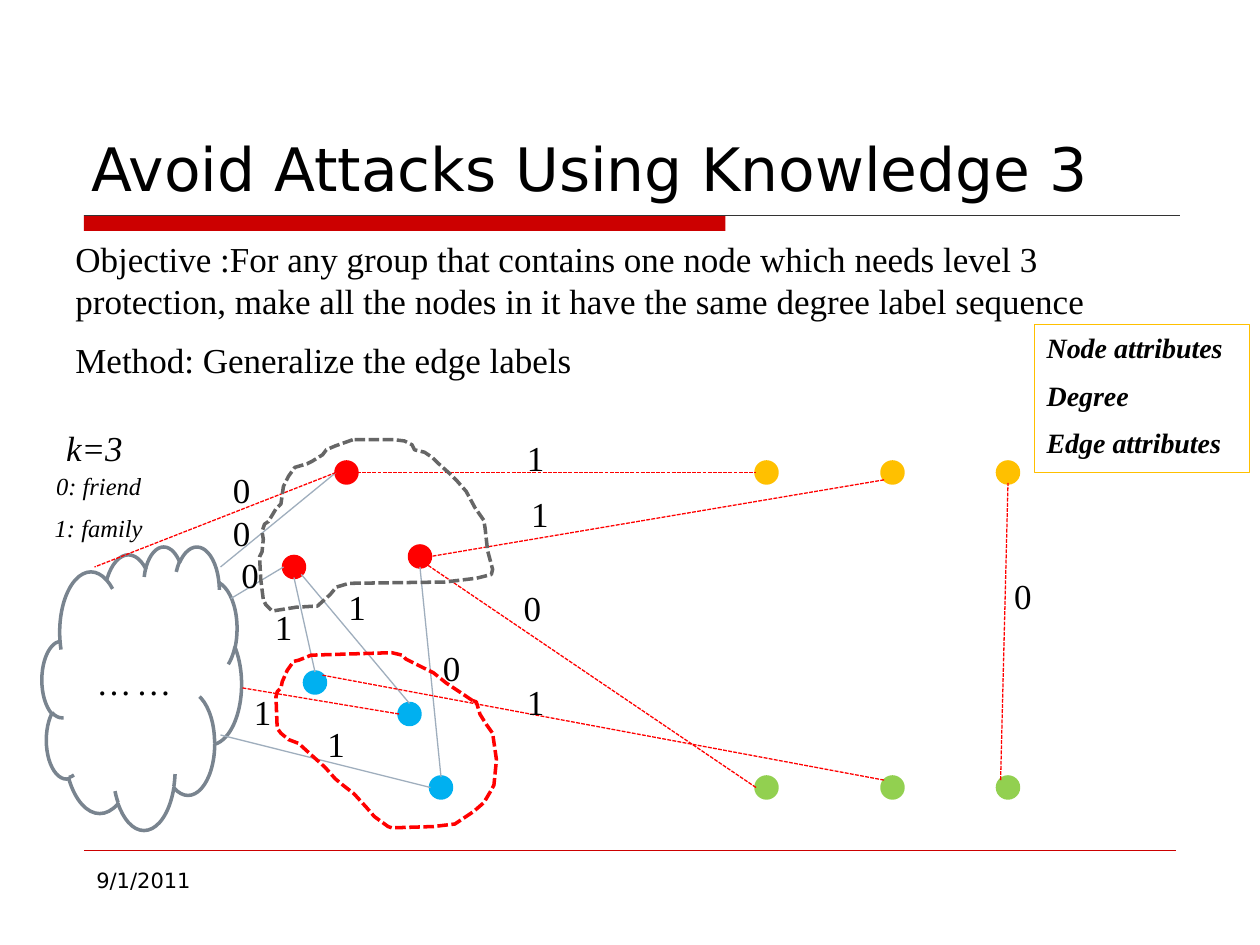
from dataclasses import dataclass

from lxml import etree
from pptx import Presentation
from pptx import util as u
from pptx.dml.color import RGBColor
from pptx.enum import dml, shapes, text
from pptx.oxml.ns import qn


@dataclass(frozen=True)
class Theme:
    black: str = "000000"
    red: str = "FF0000"
    blue: str = "00B0F0"
    gold: str = "FFC000"
    green: str = "92D050"
    bar: str = "CC0000"
    rule: str = "333333"
    edge: str = "9FAEBD"
    cloud: str = "79848F"
    group: str = "666666"
    serif: str = "Times New Roman"
    sans: str = "DejaVu Sans"
    head: float = 34.2
    body: float = 20
    attr: float = 16
    key: float = 14
    date: float = 12
    thin: float = 0.75
    thick: float = 2


LEFT, MID = text.PP_ALIGN.LEFT, text.PP_ALIGN.CENTER
TOP, CENTER, BASE = (text.MSO_ANCHOR.TOP, text.MSO_ANCHOR.MIDDLE,
                     text.MSO_ANCHOR.BOTTOM)
KIND = shapes.MSO_SHAPE


class Board:
    """A slide on a grid of 120 columns and 90 rows."""

    def __init__(self, deck, theme):
        self.theme = theme
        self.slide = deck.slides.add_slide(deck.slide_layouts[5])
        self.items = self.slide.shapes
        self.col = deck.slide_width / 120
        self.row = deck.slide_height / 90

    def area(self, x, y, w, h):
        return (round(x * self.col), round(y * self.row),
                round(w * self.col), round(h * self.row))

    def ink(self, line, color, width, dash=False):
        line.color.rgb = RGBColor.from_string(color)
        line.width = u.Pt(width)
        if dash:
            line.dash_style = dml.MSO_LINE.SQUARE_DOT

    def paint(self, shape, fill, line, width, dash=False):
        shape.shadow.inherit = False
        if fill:
            shape.fill.solid()
            shape.fill.fore_color.rgb = RGBColor.from_string(fill)
        else:
            shape.fill.background()
        if line:
            self.ink(shape.line, line, width, dash)
        else:
            shape.line.fill.background()

    def letter(self, shape, words, size, font=None, align=LEFT, anchor=TOP,
               bold=False, italic=False):
        frame = shape.text_frame
        frame.text = words
        frame.word_wrap = True
        frame.vertical_anchor = anchor
        for i, para in enumerate(frame.paragraphs):
            para.alignment = align
            if i:
                para.space_before = u.Pt(size / 2)
            for run in para.runs:
                run.font.name = font or self.theme.serif
                run.font.size = u.Pt(size)
                run.font.bold, run.font.italic = bold, italic
                run.font.color.rgb = RGBColor.from_string(self.theme.black)

    def title(self, words, *box):
        shape = self.items.title
        shape.left, shape.top, shape.width, shape.height = self.area(*box)
        self.letter(shape, words, self.theme.head, self.theme.sans, anchor=BASE)

    def label(self, words, box, size, **style):
        self.letter(self.items.add_textbox(*self.area(*box)), words, size, **style)

    def shape(self, kind, box, fill=None, line=None, width=2):
        item = self.items.add_shape(kind, *self.area(*box))
        self.paint(item, fill, line, width)
        return item

    def node(self, x, y, color):
        self.shape(KIND.OVAL, (x - 1, y - 1, 2, 2), color, color, self.theme.thick)

    def line(self, ends, color, width, dash=False):
        item = self.items.add_connector(shapes.MSO_CONNECTOR.STRAIGHT,
                                        *self.area(*ends))
        self.ink(item.line, color, width, dash)
        etree.SubElement(item.element.spPr, qn("a:effectLst"))

    def loop(self, points, color):
        """Closed dashed outline; points are in hundredths of an inch."""
        pen = self.items.build_freeform(*points[0], scale=u.Inches(0.01))
        pen.add_line_segments(points[1:], close=True)
        self.paint(pen.convert_to_shape(), None, color, self.theme.thick, True)


UPPER = [
    (280, 349), (266, 354), (259, 357), (256, 361), (248, 366), (244, 368),
    (234, 371), (229, 378), (225, 386), (223, 400), (219, 404), (213, 414),
    (210, 416), (208, 422), (209, 428), (208, 438), (206, 442), (207, 460),
    (209, 476), (211, 480), (216, 485), (235, 482), (252, 481), (262, 472),
    (267, 466), (277, 463), (353, 462), (378, 459), (390, 456), (391, 452),
    (387, 437), (385, 419), (384, 413), (377, 403), (370, 390), (363, 382),
    (357, 376), (347, 367), (343, 363), (337, 359), (329, 357), (327, 353),
    (321, 350), (313, 349)]
LOWER = [
    (375, 556), (354, 542), (344, 534), (332, 528), (322, 523), (319, 520),
    (311, 518), (247, 520), (237, 524), (233, 525), (228, 532), (224, 541),
    (223, 546), (220, 549), (219, 553), (220, 578), (223, 582), (229, 587),
    (237, 590), (248, 600), (258, 609), (266, 618), (272, 623), (281, 630),
    (291, 641), (297, 648), (308, 656), (311, 657), (344, 656), (361, 654),
    (376, 644), (384, 637), (390, 627), (392, 623), (394, 603), (391, 582),
    (386, 575), (381, 567), (378, 557)]


def main():
    deck = Presentation()
    deck.slide_width, deck.slide_height = u.Inches(10), u.Inches(7.5)
    theme = Theme()
    board = Board(deck, theme)

    # Heading, rules and date
    board.shape(KIND.RECTANGLE, (8, 20.5, 61.1, 1.5), theme.bar)
    board.line((8, 20.5, 112.4, 20.5), theme.rule, theme.thin)
    board.line((8, 81, 112, 81), theme.bar, 0.25)
    board.title("Avoid Attacks Using Knowledge 3", 7.5, 4, 105, 16)
    board.label("9/1/2011", (8, 82, 26, 6.2), theme.date, font=theme.sans)

    # Objective and method
    board.label("Objective :For any group that contains one node which needs "
                "level 3 protection, make all the nodes in it have the same "
                "degree label sequence\nMethod: Generalize the edge labels",
                (6, 22, 102, 15.4), theme.body)

    # Rest of the network
    cloud = board.shape(KIND.CLOUD, (4, 52, 19, 27), None, theme.cloud)
    board.letter(cloud, "… …", theme.body, align=MID, anchor=CENTER, italic=True)

    # Nodes by colour
    nodes = {
        theme.red: [(28, 54), (33, 45), (40, 53)],
        theme.blue: [(30, 65), (42, 75), (39, 68)],
        theme.gold: [(x, 45) for x in (73, 85, 96)],
        theme.green: [(x, 75) for x in (73, 85, 96)],
    }
    for color, spots in nodes.items():
        for x, y in spots:
            board.node(x, y, color)

    # Kept edges, then added edges
    kept = [(22, 57, 27, 54), (28, 55, 30, 64), (39, 67, 28.7, 54.7),
            (21, 70, 41, 75), (40, 54, 42, 74), (32, 45, 21, 54)]
    added = [(32, 45, 9, 54), (34, 45, 72, 45), (72, 75, 40.7, 53.8),
             (84.2, 45.7, 41, 53), (84.2, 74.3, 30.7, 64.3),
             (95.3, 74.3, 96, 46), (38, 68, 23, 65.5)]
    for ends in kept:
        board.line(ends, theme.edge, theme.thin)
    for ends in added:
        board.line(ends, theme.red, theme.thin, True)

    # Groups
    board.loop(UPPER, theme.group)
    board.loop(LOWER, theme.red)

    # Edge labels
    marks = {
        "0": [(21, 44), (21, 48.1), (21.8, 52.1), (41, 61), (48.7, 55.3),
              (95.4, 54.1)],
        "1": [(25, 57.1), (32, 55.2), (30, 68.2), (23, 65.2), (49, 41),
              (49.4, 46.3), (49, 64.2)],
    }
    for mark, spots in marks.items():
        for x, y in spots:
            board.label(mark, (x, y, 3, 5.3), theme.body, align=MID)

    # Keys
    board.label("k=3", (3, 40, 12, 5.3), theme.body, align=MID, italic=True)
    board.label("0: friend\n1: family", (2.4, 44.3, 14, 8.3), theme.key,
                align=MID, italic=True)
    attrs = board.shape(KIND.RECTANGLE, (98.5, 30.9, 20.5, 14.1), None,
                        theme.gold, theme.thin)
    board.letter(attrs, "Node attributes\nDegree\nEdge attributes", theme.attr,
                 bold=True, italic=True)

    deck.save("out.pptx")


if __name__ == "__main__":
    main()
